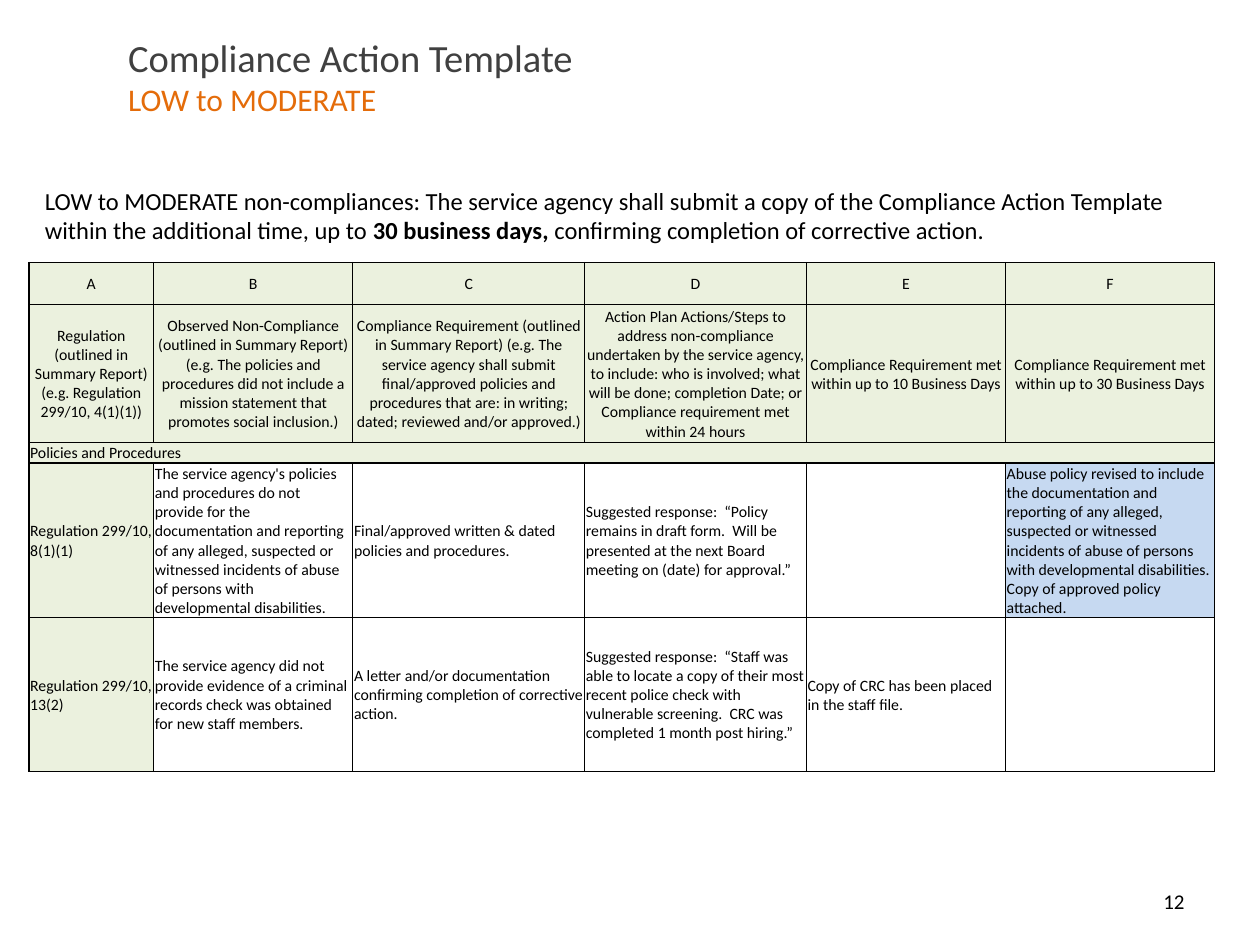
import pptx
import pptx.util
import pptx.dml.color
import pptx.enum.text
import pptx.oxml.ns
from lxml import etree

Pt = pptx.util.Pt
RGB = pptx.dml.color.RGBColor
Align = pptx.enum.text.PP_ALIGN
Anchor = pptx.enum.text.MSO_ANCHOR
Fit = pptx.enum.text.MSO_AUTO_SIZE
qn = pptx.oxml.ns.qn

BLACK = RGB(0x00, 0x00, 0x00)
WHITE = RGB(0xFF, 0xFF, 0xFF)
GRAY = RGB(0x40, 0x40, 0x40)
ORANGE = RGB(0xE4, 0x6C, 0x0A)
GREEN = RGB(0xEB, 0xF1, 0xDE)
BLUE = RGB(0xC6, 0xD9, 0xF1)

COLS = [71.3, 113.8, 132.5, 126.7, 113.8, 119.5]
ROWS = [24, 79, 10, 88, 88]
CELLS = [
    list("ABCDEF"),
    ["Regulation (outlined in Summary Report) (e.g. Regulation 299/10, 4(1)(1))",
     "Observed Non-Compliance (outlined in Summary Report) (e.g. The policies and "
     "procedures did not include a mission statement that promotes social inclusion.)",
     "Compliance Requirement (outlined in Summary Report) (e.g. The service agency "
     "shall submit final/approved policies and procedures that are: in writing; "
     "dated; reviewed and/or approved.)",
     "Action Plan Actions/Steps to address non-compliance undertaken by the service "
     "agency, to include: who is involved; what will be done; completion Date; or "
     "Compliance requirement met within 24 hours",
     "Compliance Requirement met within up to 10 Business Days",
     "Compliance Requirement met within up to 30 Business Days"],
    ["Policies and Procedures", "", "", "", "", ""],
    ["Regulation 299/10, 8(1)(1)",
     "The service agency's policies and procedures do not provide for the "
     "documentation and reporting of any alleged, suspected or witnessed incidents "
     "of abuse of persons with developmental disabilities.",
     "Final/approved written & dated policies and procedures.",
     "Suggested response:  “Policy remains in draft form.  Will be presented at the "
     "next Board meeting on (date) for approval.”",
     "",
     "Abuse policy revised to include the documentation and reporting of any "
     "alleged, suspected or witnessed incidents of abuse of persons with "
     "developmental disabilities.  Copy of approved policy attached."],
    ["Regulation 299/10, 13(2)",
     "The service agency did not provide evidence of a criminal records check was "
     "obtained for new staff members.",
     "A letter and/or documentation confirming completion of corrective action.",
     "Suggested response:  “Staff was able to locate a copy of their most recent "
     "police check with vulnerable screening.  CRC was completed 1 month post hiring.”",
     "Copy of CRC has been placed in the staff file.",
     ""],
]


class Deck:
    face = "Calibri"

    def __init__(self, wide, high):
        self.file = pptx.Presentation()
        self.file.slide_width, self.file.slide_height = Pt(wide), Pt(high)
        self.slide = None

    def add(self):
        self.slide = self.file.slides.add_slide(self.file.slide_layouts[5])

    def style(self, font, size, color=BLACK):
        font.name, font.size = self.face, Pt(size)
        font.color.rgb = color

    def title(self, box, lines):
        shape = self.slide.shapes.title
        shape.left, shape.top, shape.width, shape.height = map(Pt, box)
        frame = shape.text_frame
        frame.auto_size = Fit.NONE
        frame.vertical_anchor = Anchor.MIDDLE
        para = frame.paragraphs[0]
        para.alignment = Align.LEFT
        self.style(para.font, lines[0][1])
        for i, (text, size, color) in enumerate(lines):
            if i:
                para.add_line_break()
            run = para.add_run()
            run.text = text
            self.style(run.font, size, color)

    def text(self, box, parts, size, align=Align.LEFT, anchor=Anchor.TOP,
             fit=Fit.NONE):
        frame = self.slide.shapes.add_textbox(*map(Pt, box)).text_frame
        frame.word_wrap = True
        frame.auto_size = fit
        frame.vertical_anchor = anchor
        para = frame.paragraphs[0]
        para.alignment = align
        self.style(para.font, size)
        for text, bold in parts:
            run = para.add_run()
            run.text = text
            run.font.bold = bold

    def table(self, left, top, cols, rows, cells, fill):
        grid = self.slide.shapes.add_table(
            len(rows), len(cols), Pt(left), Pt(top),
            Pt(sum(cols)), Pt(sum(rows))).table
        for col, size in zip(grid.columns, cols):
            col.width = Pt(size)
        for row, size in zip(grid.rows, rows):
            row.height = Pt(size)
        for r, line in enumerate(cells):
            for c, text in enumerate(line):
                align = Align.CENTER if r < 2 else Align.LEFT
                self.cell(grid.cell(r, c), text, fill(r, c), align)
        return grid

    def cell(self, cell, text, color, align):
        cell.margin_left = cell.margin_right = cell.margin_top = Pt(0.75)
        cell.margin_bottom = 0
        cell.vertical_anchor = Anchor.MIDDLE
        cell.text = text
        para = cell.text_frame.paragraphs[0]
        para.alignment = align
        self.style(para.font, 9)
        # Borders come before the fill in the cell properties
        props = cell._tc.get_or_add_tcPr()
        for side in ("a:lnL", "a:lnR", "a:lnT", "a:lnB"):
            edge = etree.SubElement(props, qn(side), w=str(Pt(1)))
            solid = etree.SubElement(edge, qn("a:solidFill"))
            etree.SubElement(solid, qn("a:srgbClr"), val=str(BLACK))
        cell.fill.solid()
        cell.fill.fore_color.rgb = color


def shade(row, col):
    if row < 3 or col == 0:
        return GREEN
    return BLUE if (row, col) == (3, 5) else WHITE


def main():
    deck = Deck(720, 540)
    deck.add()

    # Heading
    deck.title((66, 22.5, 540, 42), [
        ("Compliance Action Template", 22, GRAY),
        ("LOW to MODERATE", 18, ORANGE)])

    # Page number
    deck.text((516, 500.5, 168, 29), [("12", False)], 12,
              Align.RIGHT, Anchor.MIDDLE)

    # Compliance table, with a section row across all columns
    grid = deck.table(16.5, 150, COLS, ROWS, CELLS, shade)
    grid.cell(2, 0).merge(grid.cell(2, 5))

    # Introduction
    deck.text((18.5, 102.5, 680.5, 52), [
        ("LOW to MODERATE non-compliances: The service agency shall submit a copy "
         "of the Compliance Action Template within the additional time, up to ", False),
        ("30 business days, ", True),
        ("confirming completion of corrective action.", False)], 14,
        fit=Fit.SHAPE_TO_FIT_TEXT)

    deck.file.save("out.pptx")


if __name__ == "__main__":
    main()
